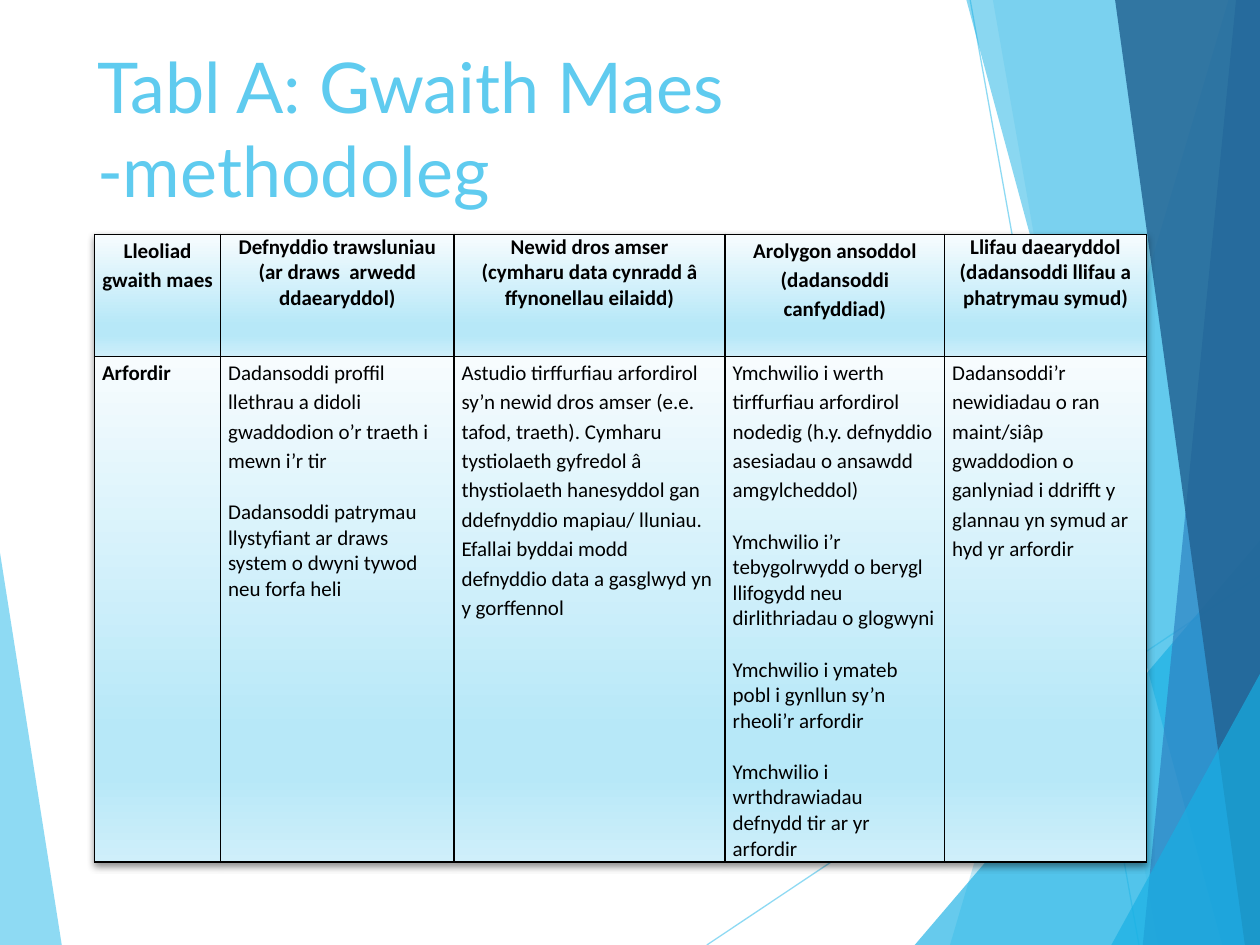
from dataclasses import dataclass

from lxml import etree
from pptx import Presentation
from pptx import util as u
from pptx.dml.color import RGBColor
from pptx.enum import shapes, text
from pptx.oxml import parse_xml
from pptx.oxml.ns import nsdecls, qn


@dataclass(frozen=True)
class Theme:
    sky: str = "5FCBEF"
    cyan: str = "17B0E4"
    blue: str = "2E83C3"
    navy: str = "226292"
    ink: str = "000000"
    cell_stops: tuple = ((0, "F7FCFE"), (74, "B7E8F8"), (83, "B7E8F8"), (100, "CFEFFA"))
    title_font: str = "Lato"
    body_font: str = "Calibri"
    title_size: int = 40
    body_size: int = 12
    loose: float = 1.15


T = Theme()
WIDTH, HEIGHT = u.Inches(10), u.Inches(7.5)

# Points are percentages of the slide's width and height.
FACETS = [
    ([(0, 58.5), (4.9, 100), (0, 100)], T.sky, 70),
    ([(97.5, 0), (75.4, 100), (100, 100), (100, 0)], T.sky, 36),
    ([(78.8, 0), (91.9, 100), (100, 100), (100, 0)], T.sky, 20),
    ([(72.6, 100), (100, 57.2), (100, 100)], T.cyan, 66),
    ([(76.7, 0), (97, 100), (100, 100), (100, 0)], T.cyan, 50),
    ([(98.1, 0), (90.7, 100), (100, 100), (100, 0)], T.blue, 70),
    ([(88.5, 0), (98.8, 100), (100, 100), (100, 0)], T.navy, 82),
    ([(88.2, 100), (100, 71.3), (100, 100)], T.cyan, 66),
]
RAYS = [((56.1, 100), (100, 60.9)), ((77, 0), (90.4, 100))]

COLUMNS = (1, 1.85, 2.15, 1.74, 1.6)
ROWS = (0.97, 4.01)

# Each cell is (first paragraph's line spacing, paragraphs).
HEADINGS = [
    (T.loose, ["Lleoliad gwaith maes"]),
    (1, ["Defnyddio trawsluniau (ar draws  arwedd ddaearyddol)"]),
    (1, ["Newid dros amser", "(cymharu data cynradd â ffynonellau eilaidd)"]),
    (T.loose, ["Arolygon ansoddol (dadansoddi canfyddiad)"]),
    (1, ["Llifau daearyddol", "(dadansoddi llifau a phatrymau symud)"]),
]
COAST = [
    (T.loose, ["Arfordir"]),
    (T.loose, [
        "Dadansoddi proffil llethrau a didoli gwaddodion o’r traeth i mewn i’r tir",
        "Dadansoddi patrymau llystyfiant ar draws system o dwyni tywod neu forfa heli",
    ]),
    (T.loose, [
        "Astudio tirffurfiau arfordirol sy’n newid dros amser (e.e. tafod, traeth). "
        "Cymharu tystiolaeth gyfredol â thystiolaeth hanesyddol gan ddefnyddio mapiau/ "
        "lluniau. Efallai byddai modd defnyddio data a gasglwyd yn y gorffennol",
    ]),
    (T.loose, [
        "Ymchwilio i werth tirffurfiau arfordirol nodedig (h.y. defnyddio asesiadau "
        "o ansawdd amgylcheddol)",
        "Ymchwilio i’r tebygolrwydd o berygl llifogydd neu dirlithriadau o glogwyni",
        "Ymchwilio i ymateb pobl i gynllun sy’n rheoli’r arfordir",
        "Ymchwilio i wrthdrawiadau defnydd tir ar yr arfordir",
    ]),
    (T.loose, [
        "Dadansoddi’r newidiadau o ran maint/siâp gwaddodion o ganlyniad i ddrifft "
        "y glannau yn symud ar hyd yr arfordir",
    ]),
]


def place(x, y):
    """Turn percentages of the slide into lengths."""
    return u.Emu(round(WIDTH * x / 100)), u.Emu(round(HEIGHT * y / 100))


def set_alpha(fill, percent):
    color = fill._xPr.find(qn("a:solidFill"))[0]
    etree.SubElement(color, qn("a:alpha")).set("val", str(percent * 1000))


def write(tf, paragraphs, *, font, size, color, bold=False, align=text.PP_ALIGN.LEFT,
          first_spacing=1, gap=0):
    for i, words in enumerate(paragraphs):
        p = tf.paragraphs[0] if i == 0 else tf.add_paragraph()
        p.alignment = align
        p.line_spacing = 1.0 if i else first_spacing
        p.space_before = u.Pt(gap if i else 0)
        r = p.add_run()
        r.text = words
        r.font.name, r.font.size, r.font.bold = font, u.Pt(size), bold
        r.font.color.rgb = RGBColor.from_string(color)


def add_facet(slide, points, color, alpha):
    start, *rest = [place(*point) for point in points]
    builder = slide.shapes.build_freeform(*start)
    builder.add_line_segments(rest, close=True)
    sp = builder.convert_to_shape()
    sp.shadow.inherit = False
    sp.line.fill.background()
    sp.fill.solid()
    sp.fill.fore_color.rgb = RGBColor.from_string(color)
    set_alpha(sp.fill, alpha)


def add_ray(slide, start, end):
    line = slide.shapes.add_connector(
        shapes.MSO_CONNECTOR.STRAIGHT, *place(*start), *place(*end))
    line.line.width = u.Pt(0.75)
    line.line.color.rgb = RGBColor.from_string(T.sky)
    set_alpha(line.line.fill, 70)
    etree.SubElement(line._element.spPr, qn("a:effectLst"))


def add_backdrop(slide):
    left_facet, *right_facets = FACETS
    add_facet(slide, *left_facet)
    for ray in RAYS:
        add_ray(slide, *ray)
    for facet in right_facets:
        add_facet(slide, *facet)


def add_title(slide, box, words):
    title = slide.shapes.title
    title.left, title.top = place(*box[:2])
    title.width, title.height = place(*box[2:])
    slide.shapes._spTree.append(title._element)
    tf = title.text_frame
    tf.word_wrap = True
    tf.auto_size = text.MSO_AUTO_SIZE.NONE
    tf.vertical_anchor = text.MSO_ANCHOR.MIDDLE
    write(tf, [words], font=T.title_font, size=T.title_size, color=T.sky)


def style_cell(cell):
    """Set insets, black borders and the vertical gradient."""
    cell.margin_left = cell.margin_right = u.Inches(0.06)
    cell.margin_top = cell.margin_bottom = 0
    cell.vertical_anchor = text.MSO_ANCHOR.TOP
    tc_pr = cell._tc.get_or_add_tcPr()
    for side in "LRTB":
        tc_pr.append(parse_xml(
            f'<a:ln{side} {nsdecls("a")} w="{u.Pt(1)}"><a:solidFill>'
            f'<a:srgbClr val="{T.ink}"/></a:solidFill></a:ln{side}>'))
    stops = "".join(f'<a:gs pos="{pos * 1000}"><a:srgbClr val="{color}"/></a:gs>'
                    for pos, color in T.cell_stops)
    tc_pr.append(parse_xml(
        f'<a:gradFill {nsdecls("a")} rotWithShape="1"><a:gsLst>{stops}</a:gsLst>'
        '<a:lin ang="5400000" scaled="0"/></a:gradFill>'))


def add_methods_table(slide, box, rows):
    width, height = place(*box[2:])
    table = slide.shapes.add_table(
        len(ROWS), len(COLUMNS), *place(*box[:2]), width, height).table
    table.horz_banding = False
    table._tbl.tblPr.insert(0, parse_xml(
        f'<a:effectLst {nsdecls("a")}><a:outerShdw blurRad="50800" dist="25400" '
        'dir="5400000"><a:srgbClr val="000000"><a:alpha val="45000"/></a:srgbClr>'
        '</a:outerShdw></a:effectLst>'))
    for column, share in zip(table.columns, COLUMNS):
        column.width = u.Emu(round(width * share / sum(COLUMNS)))
    for row, share in zip(table.rows, ROWS):
        row.height = u.Emu(round(height * share / sum(ROWS)))
    for i, cells in enumerate(rows):
        heading = i == 0
        for j, (spacing, paragraphs) in enumerate(cells):
            cell = table.cell(i, j)
            style_cell(cell)
            write(cell.text_frame, paragraphs, font=T.body_font, size=T.body_size,
                  color=T.ink, bold=heading or j == 0, first_spacing=spacing,
                  align=text.PP_ALIGN.CENTER if heading else text.PP_ALIGN.LEFT,
                  gap=0 if heading else 14.6)


def main():
    prs = Presentation()
    prs.slide_width, prs.slide_height = WIDTH, HEIGHT
    slide = prs.slides.add_slide(prs.slide_layouts.get_by_name("Title Only"))
    add_backdrop(slide)
    add_title(slide, (6.7, 3.9, 69.4, 19.2), "Tabl A: Gwaith Maes -methodoleg")
    add_methods_table(slide, (7.5, 24.8, 83.5, 66.4), [HEADINGS, COAST])
    prs.save("out.pptx")


if __name__ == "__main__":
    main()
